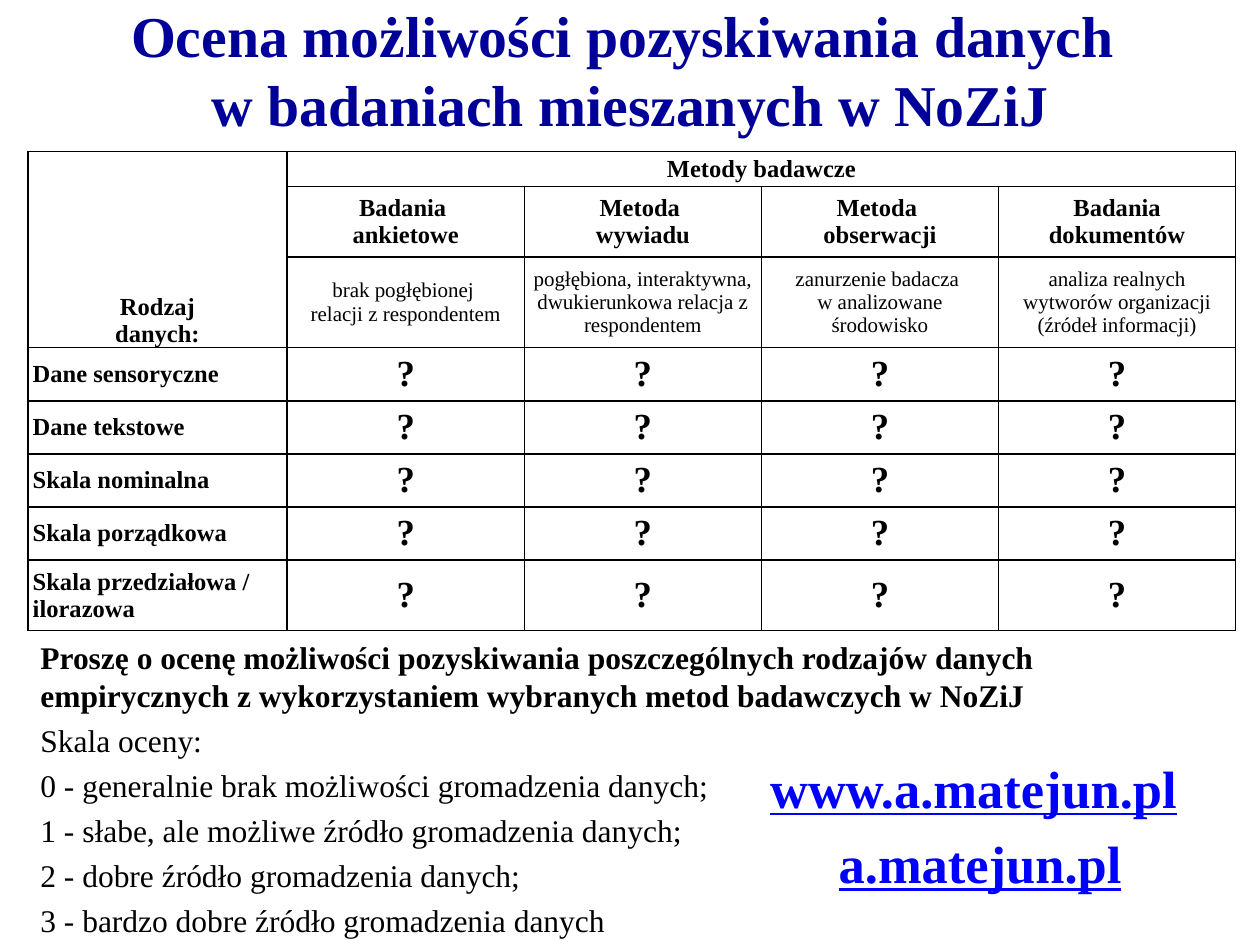
from lxml import etree
from pptx import Presentation
from pptx.dml.color import RGBColor
from pptx.enum.text import MSO_ANCHOR, MSO_AUTO_SIZE, PP_ALIGN
from pptx.oxml.ns import qn
from pptx.util import Cm, Pt

LEFT, CENTER = PP_ALIGN.LEFT, PP_ALIGN.CENTER
TOP, MIDDLE, BOTTOM = MSO_ANCHOR.TOP, MSO_ANCHOR.MIDDLE, MSO_ANCHOR.BOTTOM
NO_AUTOFIT = MSO_AUTO_SIZE.NONE

TITLE = "Ocena możliwości pozyskiwania danych \vw badaniach mieszanych w NoZiJ"
CORNER = "Rodzaj\vdanych:"
GROUP = "Metody badawcze"
METHODS = [
    ("Badania \vankietowe", "brak pogłębionej \vrelacji z respondentem"),
    ("Metoda \vwywiadu", "pogłębiona, interaktywna, dwukierunkowa relacja z respondentem"),
    ("Metoda \vobserwacji", "zanurzenie badacza \nw analizowane środowisko"),
    ("Badania dokumentów", "analiza realnych wytworów organizacji (źródeł informacji)"),
]
DATA_KINDS = ["Dane sensoryczne", "Dane tekstowe", "Skala nominalna",
              "Skala porządkowa", "Skala przedziałowa / ilorazowa"]
QUESTION = ("Proszę o ocenę możliwości pozyskiwania poszczególnych rodzajów danych "
            "empirycznych z wykorzystaniem wybranych metod badawczych w NoZiJ")
SCALE = [
    "Skala oceny:",
    "0 - generalnie brak możliwości gromadzenia danych;",
    "1 - słabe, ale możliwe źródło gromadzenia danych;",
    "2 - dobre źródło gromadzenia danych;",
    "3 - bardzo dobre źródło gromadzenia danych",
]
ADDRESSES = ["www.a.matejun.pl", "a.matejun.pl"]

BLACK, WHITE = RGBColor(0, 0, 0), RGBColor(255, 255, 255)
FONT = {"name": "Times New Roman", "bold": True}
THEME = {
    "title": {**FONT, "size": Pt(33), "color": RGBColor(0, 0, 0x99)},
    "header": {**FONT, "size": Pt(14), "color": BLACK},
    "detail": {**FONT, "size": Pt(12), "color": BLACK, "bold": False},
    "mark": {**FONT, "size": Pt(21), "color": BLACK},
    "question": {**FONT, "size": Pt(18), "color": BLACK},
    "scale": {**FONT, "size": Pt(18), "color": BLACK, "bold": False},
    "address": {**FONT, "size": Pt(30), "color": RGBColor(0, 0, 255), "underline": True},
    "address_gap": {**FONT, "size": Pt(30), "color": BLACK, "underline": False},
}

TITLE_BOX = (0, 0.86, 25.4, 1.07)
TABLE_BOX = (0.56, 3.05, 24.33, 9.68)
BODY_BOX = (0.56, 12.73, 24, 6.32)
ADDRESS_BOX = (14.83, 15.11, 9.86, 3.07)
COLUMN_WIDTHS = [5.23] + [4.78] * len(METHODS)
ROW_HEIGHTS = [0.71, 1.42, 1.83] + [1.07] * 4 + [1.42]


def set_values(target, values):
    for name, value in values.items():
        setattr(target, name, value)


def style_run(run, style):
    for name, value in THEME[style].items():
        if name == "color":
            run.font.color.rgb = value
        else:
            setattr(run.font, name, value)


def style_paragraph(paragraph, style, **formats):
    set_values(paragraph, formats)
    for run in paragraph.runs:
        style_run(run, style)


def place(shape, box):
    set_values(shape, dict(zip(("left", "top", "width", "height"), map(Cm, box))))
    set_values(shape.text_frame, {"word_wrap": True, "auto_size": NO_AUTOFIT})


def remove_bullet(paragraph):
    properties = paragraph._p.get_or_add_pPr()
    properties.set("marL", "0")
    properties.set("indent", "0")
    etree.SubElement(properties, qn("a:buNone"))


def add_borders(cell):
    properties = cell._tc.get_or_add_tcPr()
    for side in "LRTB":
        line = etree.SubElement(properties, qn(f"a:ln{side}"), w=str(Pt(1)))
        fill = etree.SubElement(line, qn("a:solidFill"))
        etree.SubElement(fill, qn("a:srgbClr"), val=str(BLACK))


def fill_cell(cell, text, style, alignment=CENTER, anchor=MIDDLE):
    cell.text = text
    set_values(cell, {"vertical_anchor": anchor,
                      "margin_left": Cm(0.1), "margin_right": Cm(0.1),
                      "margin_top": 0, "margin_bottom": 0})
    add_borders(cell)
    cell.fill.solid()
    cell.fill.fore_color.rgb = WHITE
    for paragraph in cell.text_frame.paragraphs:
        style_paragraph(paragraph, style, alignment=alignment)


def add_ratings(slide):
    rows = [
        [(CORNER, "header", CENTER, BOTTOM), (GROUP, "header")] + [("", "header")] * 3,
        [("", "header")] + [(name, "header") for name, _ in METHODS],
        [("", "header")] + [(detail, "detail") for _, detail in METHODS],
    ]
    rows += [[(kind, "header", LEFT)] + [("?", "mark")] * len(METHODS) for kind in DATA_KINDS]
    frame = slide.shapes.add_table(len(rows), len(COLUMN_WIDTHS), *map(Cm, TABLE_BOX))
    table = frame.table
    set_values(table, {"first_row": False, "horz_banding": False})
    for column, width in zip(table.columns, COLUMN_WIDTHS):
        column.width = Cm(width)
    for row, height in zip(table.rows, ROW_HEIGHTS):
        row.height = Cm(height)
    for row, contents in zip(table.rows, rows):
        for cell, content in zip(row.cells, contents):
            fill_cell(cell, *content)
    table.cell(0, 0).merge(table.cell(2, 0))
    table.cell(0, 1).merge(table.cell(0, len(METHODS)))


def main():
    presentation = Presentation()
    set_values(presentation, {"slide_width": Cm(25.4), "slide_height": Cm(19.05)})
    slide = presentation.slides.add_slide(presentation.slide_layouts[1])

    title = slide.shapes.title
    place(title, TITLE_BOX)
    title.text_frame.text = TITLE
    title.text_frame.vertical_anchor = MIDDLE
    style_paragraph(title.text_frame.paragraphs[0], "title", alignment=CENTER)

    add_ratings(slide)

    body = slide.placeholders[1]
    place(body, BODY_BOX)
    body.text_frame.text = "\n".join([QUESTION] + SCALE)
    body.text_frame.vertical_anchor = TOP
    for index, paragraph in enumerate(body.text_frame.paragraphs):
        remove_bullet(paragraph)
        style_paragraph(paragraph, "scale" if index else "question",
                        alignment=LEFT, space_before=Pt(4.2 if index else 0))

    addresses = slide.shapes.add_textbox(*map(Cm, ADDRESS_BOX))
    place(addresses, ADDRESS_BOX)
    addresses.text_frame.text = "\n".join(ADDRESSES)
    for index, paragraph in enumerate(addresses.text_frame.paragraphs):
        style_paragraph(paragraph, "address", alignment=CENTER,
                        space_before=Pt(7 if index else 0))
    gap = addresses.text_frame.paragraphs[0].add_run()
    gap.text = " "
    style_run(gap, "address_gap")

    presentation.save("out.pptx")


if __name__ == "__main__":
    main()
